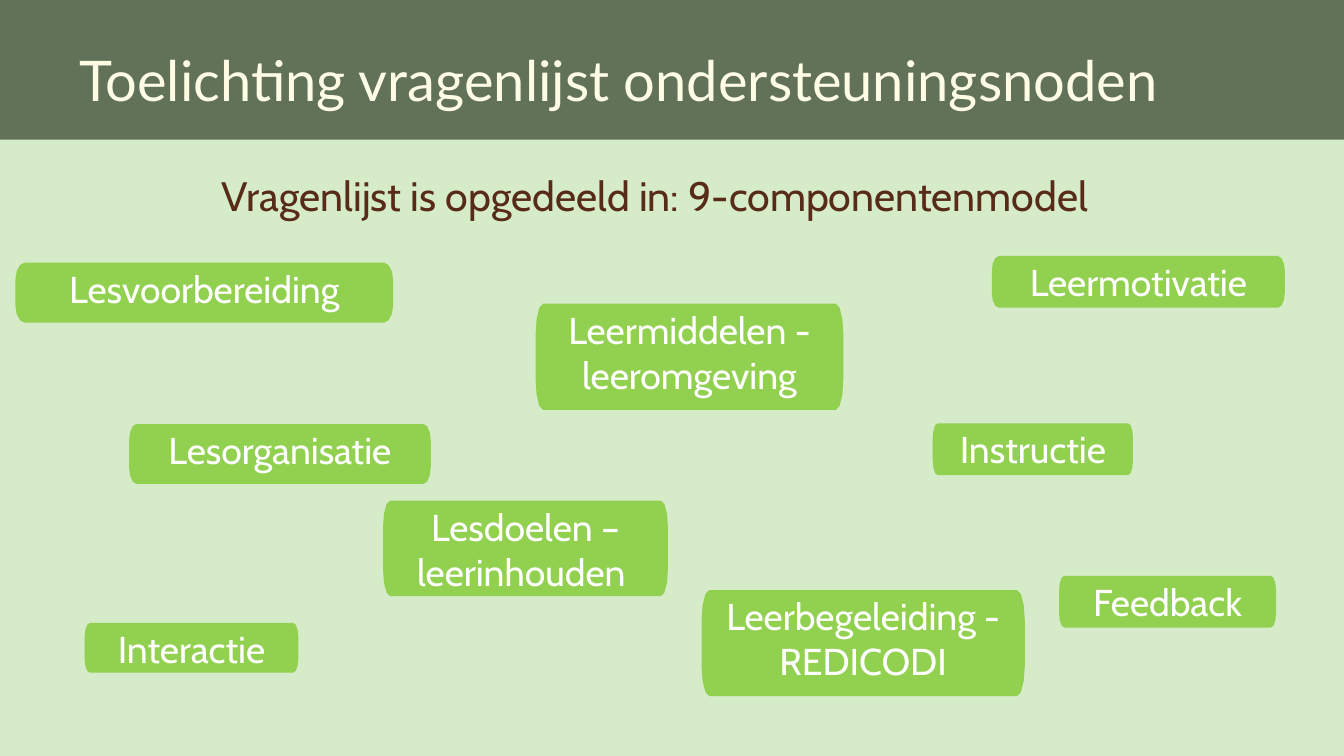
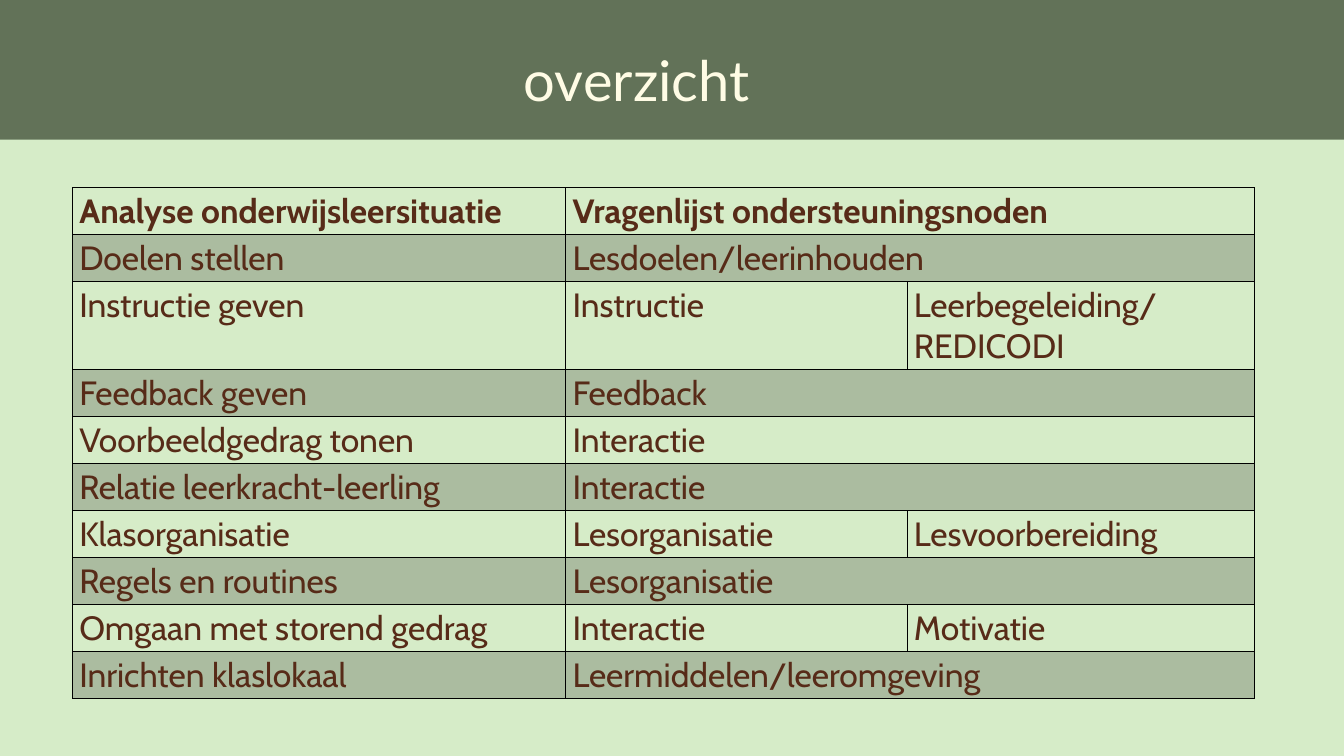
import math
from lxml import etree
from pptx import Presentation
from pptx.dml.color import RGBColor
from pptx.enum.shapes import MSO_SHAPE
from pptx.enum.text import MSO_ANCHOR, MSO_AUTO_SIZE, PP_ALIGN
from pptx.oxml.ns import qn
from pptx.util import Inches, Pt

LEFT, CENTER = PP_ALIGN.LEFT, PP_ALIGN.CENTER
TOP, NO_FIT = MSO_ANCHOR.TOP, MSO_AUTO_SIZE.NONE
RECT = MSO_SHAPE.RECTANGLE

# Grid: 20 columns by 11.25 rows of square units
UNIT = Inches(1)
COLS, ROWS = 20, 11.25
BAND = 2.08  # rows taken by the title band
MOSS, MINT, LIME = "627258", "D6ECC8", "92D050"
CREAM, BROWN, WHITE, BLACK = "FFFCE5", "572B18", "FFFFFF", "000000"


def rgb(color):
    return RGBColor.from_string(color)


def write(tf, text, size, font, color, align=CENTER, bold=False):
    tf.word_wrap = True
    p = tf.paragraphs[0]
    p.alignment = align
    for i, line in enumerate(text.split("\n")):
        if i:
            p.add_line_break()
        r = p.add_run()
        r.text = line
        r.font.size, r.font.name, r.font.bold = Pt(size), font, bold
        r.font.color.rgb = rgb(color)


prs = Presentation()
prs.slide_width, prs.slide_height = int(COLS * UNIT), int(ROWS * UNIT)
fill = prs.slide_master.background.fill
fill.solid()
fill.fore_color.rgb = rgb(MOSS)

# Both slides: title in the dark band, pale panel below
titles = [
    ("Toelichting vragenlijst ondersteuningsnoden", LEFT, 1.08, 17.33),
    ("overzicht", CENTER, 0, 18.95),
]
for text, align, x, w in titles:
    s = prs.slides.add_slide(prs.slide_layouts[5])
    sp = s.shapes.title
    sp.left, sp.top, sp.width, sp.height = [int(v * UNIT) for v in (x, 0.62, w, 1.11)]
    tf = sp.text_frame
    tf.auto_size, tf.vertical_anchor = NO_FIT, TOP
    write(tf, text, 60, "Lato", CREAM, align)
    panel = s.shapes.add_shape(RECT, 0, int(BAND * UNIT), prs.slide_width,
                               int((ROWS - BAND) * UNIT))
    panel.shadow.inherit = False
    panel.fill.solid()
    panel.fill.fore_color.rgb = rgb(MINT)
    panel.line.fill.background()
model, overview = prs.slides

# Slide 1: the nine components
components = [
    ("Feedback", 15.76, 8.57, 3.23, 0.77),
    ("Instructie", 13.88, 6.3, 2.98, 0.77),
    ("Leermotivatie", 14.76, 3.81, 4.36, 0.77),
    ("Leerbegeleiding - REDICODI", 10.44, 8.78, 4.81, 1.58),
    ("Interactie", 1.26, 9.27, 3.18, 0.74),
    ("Lesorganisatie", 1.92, 6.31, 4.49, 0.89),
    ("Lesdoelen – leerinhouden ", 5.7, 7.45, 4.24, 1.42),
    ("Leermiddelen - leeromgeving", 7.97, 4.52, 4.58, 1.58),
    ("Lesvoorbereiding", 0.23, 3.91, 5.62, 0.89),
]
STEPS = 3  # segments in each rounded corner
for text, *place in components:
    x, y, w, h = [v * UNIT for v in place]
    rx, ry = 0.024 * w, 0.285 * h
    corners = [(x + w - rx, y + h - ry), (x + rx, y + h - ry),
               (x + rx, y + ry), (x + w - rx, y + ry)]
    points = []
    for quarter, (cx, cy) in enumerate(corners):
        for step in range(STEPS + 1):
            angle = (quarter + step / STEPS) * math.pi / 2
            points.append((cx + rx * math.cos(angle), cy + ry * math.sin(angle)))
    outline = model.shapes.build_freeform(*points[0])
    outline.add_line_segments(points[1:], close=True)
    sp = outline.convert_to_shape()
    sp.shadow.inherit = False
    sp.fill.solid()
    sp.fill.fore_color.rgb = rgb(LIME)
    sp.line.fill.background()
    sp.text_frame.vertical_anchor = TOP
    write(sp.text_frame, text, 40, "Cabin", WHITE)

box = model.shapes.add_textbox(*[int(v * UNIT) for v in (1.54, 2.49, 16.42, 0.84)])
write(box.text_frame, "Vragenlijst is opgedeeld in: 9-componentenmodel", 44, "Cabin", BROWN)

# Slide 2: table; in rows with two entries the last two columns are merged
rows = [
    ("Analyse onderwijsleersituatie", "Vragenlijst ondersteuningsnoden"),
    ("Doelen stellen", "Lesdoelen/leerinhouden"),
    ("Instructie geven", "Instructie", "Leerbegeleiding/\nREDICODI"),
    ("Feedback geven", "Feedback"),
    ("Voorbeeldgedrag tonen", "Interactie"),
    ("Relatie leerkracht-leerling", "Interactie"),
    ("Klasorganisatie", "Lesorganisatie", "Lesvoorbereiding"),
    ("Regels en routines", "Lesorganisatie"),
    ("Omgaan met storend gedrag", "Interactie", "Motivatie"),
    ("Inrichten klaslokaal", "Leermiddelen/leeromgeving"),
]
widths = [7.34, 5.08, 5.16]
heights = [1.31 if "\n" in row[-1] else 0.7 for row in rows]
frame = overview.shapes.add_table(
    len(rows), len(widths),
    *[int(v * UNIT) for v in (1.08, 2.79, sum(widths), sum(heights))])
table = frame.table
table.first_row = table.horz_banding = False
for column, w in zip(table.columns, widths):
    column.width = int(w * UNIT)

for i, row in enumerate(rows):
    table.rows[i].height = int(heights[i] * UNIT)
    if len(row) == 2:
        table.cell(i, 1).merge(table.cell(i, 2))
    for j in range(len(widths)):
        cell = table.cell(i, j)
        cell.margin_top, cell.margin_bottom = Inches(0.05), Inches(0.04)
        tcPr = cell._tc.get_or_add_tcPr()
        for side in ("a:lnL", "a:lnR", "a:lnT", "a:lnB"):
            ln = etree.SubElement(tcPr, qn(side), w=str(Pt(1)))
            solid = etree.SubElement(ln, qn("a:solidFill"))
            etree.SubElement(solid, qn("a:srgbClr"), val=BLACK)
        if i % 2:
            cell.fill.solid()
            cell.fill.fore_color.rgb = rgb(BLACK)
            shade = tcPr.find(qn("a:solidFill")).find(qn("a:srgbClr"))
            etree.SubElement(shade, qn("a:alpha"), val="20000")
        else:
            cell.fill.background()
        if j < len(row):
            write(cell.text_frame, row[j], 36, "Cabin", BROWN, LEFT, bold=i == 0)

prs.save("out.pptx")
